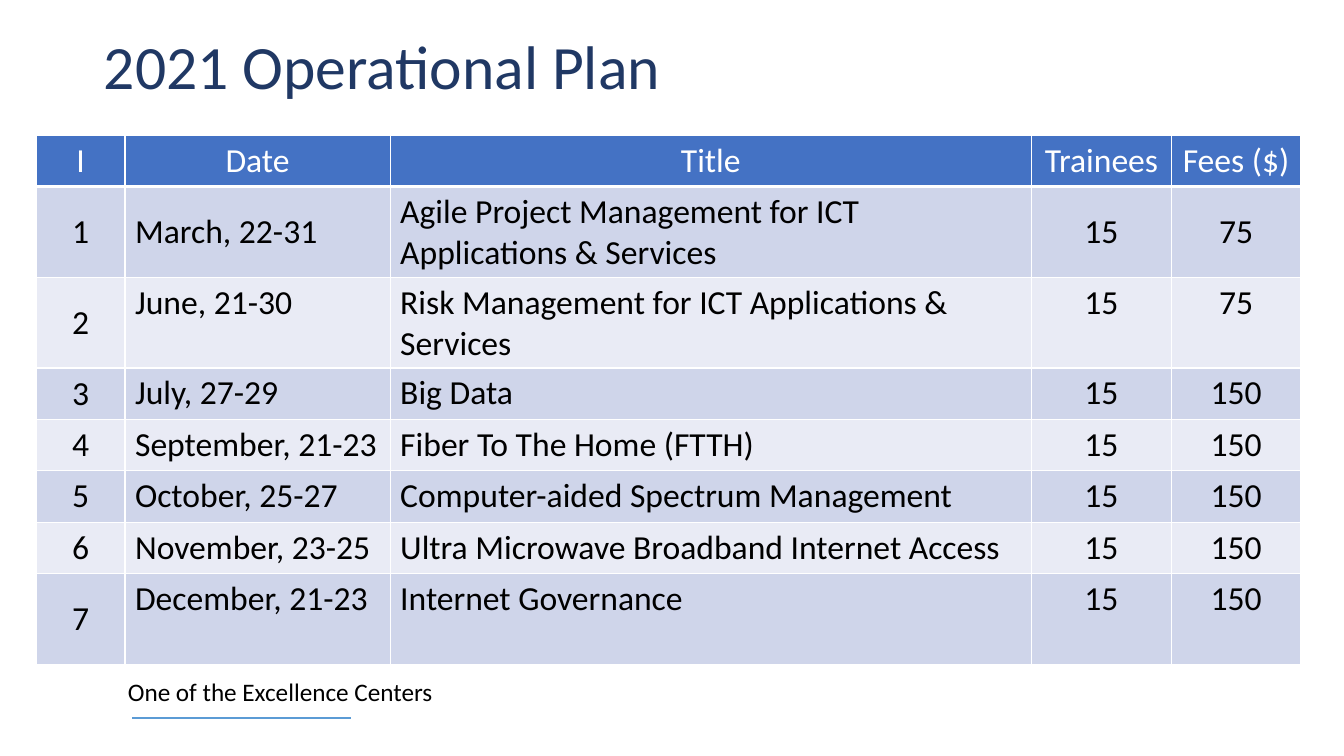
from dataclasses import dataclass

from lxml.etree import SubElement
from pptx import Presentation
from pptx.dml.color import RGBColor
from pptx.enum.shapes import MSO_CONNECTOR
from pptx.enum.text import MSO_ANCHOR, PP_ALIGN
from pptx.oxml.ns import qn
from pptx.slide import Slide
from pptx.table import _Cell
from pptx.text.text import _Paragraph
from pptx.util import Inches, Pt

FONT = "Calibri"
BLACK = "000000"
WHITE = "FFFFFF"
HEADER_BLUE = "4472C4"
BANDS = ("E9EBF5", "CFD5EA")
SINGLE_ROW, DOUBLE_ROW = 0.51, 0.9


@dataclass(frozen=True)
class Column:
    heading: str
    width: float
    align: PP_ALIGN


@dataclass(frozen=True)
class Course:
    date: str
    title: str
    fee: int
    height: float = SINGLE_ROW
    anchor: MSO_ANCHOR = MSO_ANCHOR.TOP
    trainees: int = 15


COLUMNS = (
    Column("I", 0.88, PP_ALIGN.CENTER),
    Column("Date", 2.63, PP_ALIGN.LEFT),
    Column("Title", 6.36, PP_ALIGN.LEFT),
    Column("Trainees", 1.39, PP_ALIGN.CENTER),
    Column("Fees ($)", 1.28, PP_ALIGN.CENTER),
)
COURSES = (
    Course("March, 22-31", "Agile Project Management for ICT Applications & Services",
           75, DOUBLE_ROW, MSO_ANCHOR.MIDDLE),
    Course("June, 21-30", "Risk Management for ICT Applications & Services",
           75, DOUBLE_ROW),
    Course("July, 27-29", "Big Data", 150),
    Course("September, 21-23", "Fiber To The Home (FTTH)", 150),
    Course("October, 25-27", "Computer-aided Spectrum Management", 150),
    Course("November, 23-25", "Ultra Microwave Broadband Internet Access", 150),
    Course("December, 21-23", "Internet Governance", 150, DOUBLE_ROW),
)


def color(value: str) -> RGBColor:
    return RGBColor.from_string(value)


def add_run(paragraph: _Paragraph, text: str, size: float, ink: str) -> None:
    run = paragraph.add_run()
    run.text = text
    run.font.name = FONT
    run.font.size = Pt(size)
    run.font.bold = False
    run.font.color.rgb = color(ink)


def add_borders(cell: _Cell, bottom: float) -> None:
    properties = cell._tc.get_or_add_tcPr()
    sides = (("lnL", 1), ("lnR", 1), ("lnT", 1), ("lnB", bottom))
    for index, (side, width) in enumerate(sides):
        border = SubElement(properties, qn(f"a:{side}"), w=str(Pt(width)))
        fill = SubElement(border, qn("a:solidFill"))
        SubElement(fill, qn("a:srgbClr"), val=WHITE)
        properties.insert(index, border)


def fill_cell(cell: _Cell, text: str, fill: str, ink: str, align: PP_ALIGN,
              anchor: MSO_ANCHOR, bottom: float = 1) -> None:
    cell.fill.solid()
    cell.fill.fore_color.rgb = color(fill)
    cell.vertical_anchor = anchor
    paragraph = cell.text_frame.paragraphs[0]
    paragraph.alignment = align
    add_run(paragraph, text, 24, ink)
    add_borders(cell, bottom)


def add_footer(slide: Slide) -> None:
    rule = slide.shapes.add_connector(
        MSO_CONNECTOR.STRAIGHT, Inches(1.31), Inches(7.12), Inches(3.48), Inches(7.12))
    rule.line.color.rgb = color("5B9BD5")
    rule.line.width = Pt(1.5)
    SubElement(rule._element.spPr, qn("a:effectLst"))
    footer = slide.shapes.add_textbox(
        Inches(1.17), Inches(6.66), Inches(3.26), Inches(0.4))
    footer.text_frame.word_wrap = False
    add_run(footer.text_frame.paragraphs[0], "One of the Excellence Centers", 18, BLACK)


def add_title(slide: Slide) -> None:
    title = slide.shapes.title
    title.left, title.top = Inches(0.93), Inches(0.31)
    title.width, title.height = Inches(11.5), Inches(1.45)
    title.text_frame.vertical_anchor = MSO_ANCHOR.TOP
    title.text_frame.word_wrap = True
    heading = title.text_frame.paragraphs[0]
    heading.alignment = PP_ALIGN.LEFT
    heading.line_spacing = 0.9
    add_run(heading, "2021 Operational Plan", 44, "203864")


def add_plan(slide: Slide) -> None:
    heights = [SINGLE_ROW] + [course.height for course in COURSES]
    plan = slide.shapes.add_table(
        len(heights), len(COLUMNS), Inches(0.36), Inches(1.34),
        Inches(sum(column.width for column in COLUMNS)), Inches(sum(heights))).table
    for row, height in zip(plan.rows, heights):
        row.height = Inches(height)
    for index, column in enumerate(COLUMNS):
        plan.columns[index].width = Inches(column.width)
        fill_cell(plan.cell(0, index), column.heading, HEADER_BLUE, WHITE,
                  PP_ALIGN.CENTER, MSO_ANCHOR.MIDDLE, bottom=3)
    for number, course in enumerate(COURSES, start=1):
        values = (number, course.date, course.title, course.trainees, course.fee)
        for index, (column, value) in enumerate(zip(COLUMNS, values)):
            anchor = MSO_ANCHOR.MIDDLE if index == 0 else course.anchor
            fill_cell(plan.cell(number, index), str(value), BANDS[number % 2],
                      BLACK, column.align, anchor)


def main() -> None:
    presentation = Presentation()
    presentation.slide_width = Inches(13.33)
    presentation.slide_height = Inches(7.5)
    slide = presentation.slides.add_slide(presentation.slide_layouts[5])
    add_footer(slide)
    add_title(slide)
    add_plan(slide)
    presentation.save("out.pptx")


if __name__ == "__main__":
    main()
